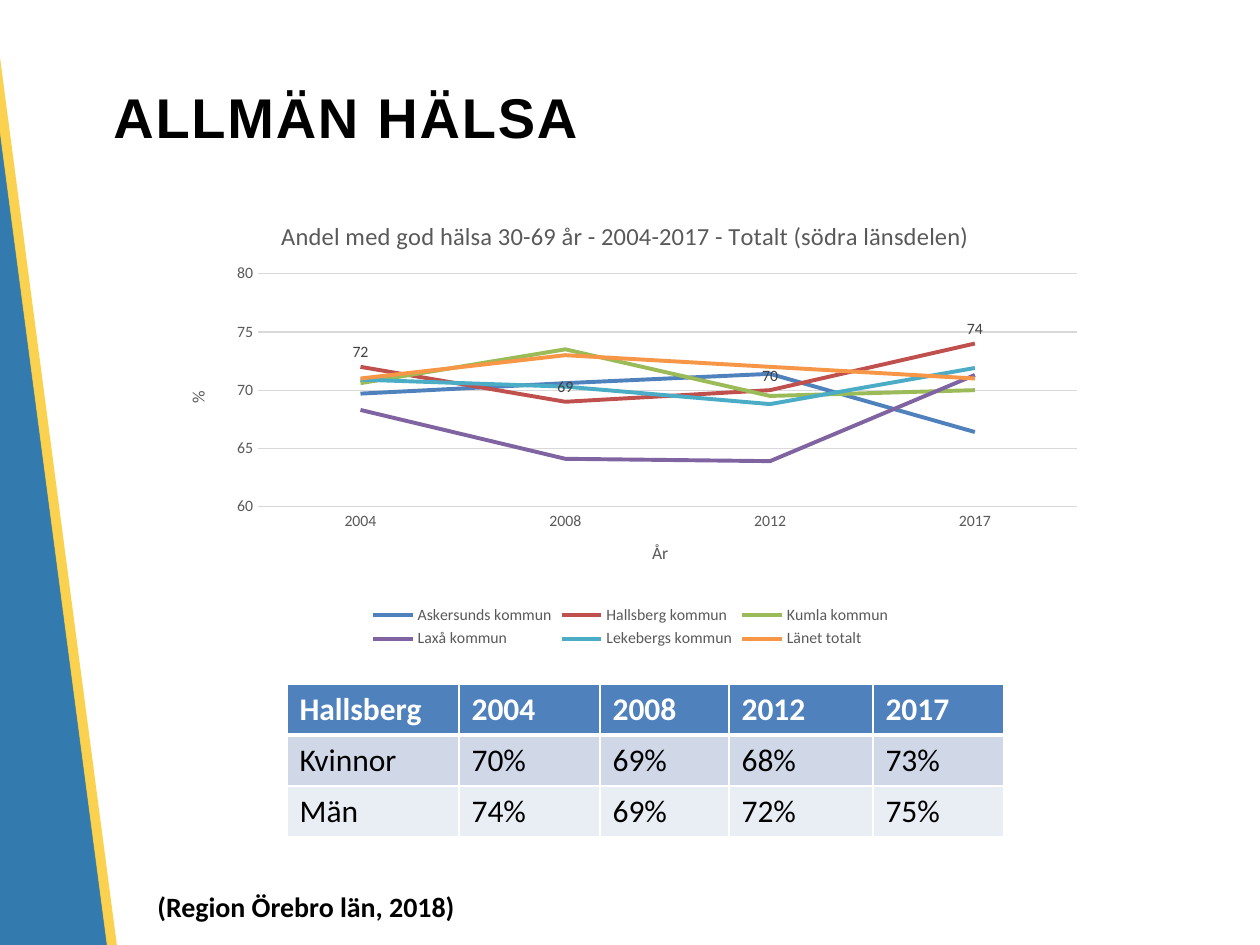
"""Build the "Allmän hälsa" slide: health trend chart and table for Hallsberg."""
from lxml import etree
from pptx import Presentation
from pptx.chart.data import CategoryChartData
from pptx.dml.color import RGBColor
from pptx.enum.chart import XL_CHART_TYPE, XL_LABEL_POSITION, XL_LEGEND_POSITION, XL_TICK_MARK
from pptx.enum.shapes import MSO_SHAPE
from pptx.enum.text import MSO_ANCHOR
from pptx.oxml import parse_xml
from pptx.oxml.ns import nsdecls, qn
from pptx.util import Emu, Pt

LINE_CHART = XL_CHART_TYPE.LINE
LABEL_ABOVE = XL_LABEL_POSITION.ABOVE
LEGEND_BOTTOM = XL_LEGEND_POSITION.BOTTOM
NO_TICK = XL_TICK_MARK.NONE
RECTANGLE = MSO_SHAPE.RECTANGLE
MIDDLE = MSO_ANCHOR.MIDDLE

PX = 914400 / 126
BLACK = RGBColor(0, 0, 0)
WHITE = RGBColor(255, 255, 255)
GRAY = RGBColor(0x59, 0x59, 0x59)
LABEL_GRAY = RGBColor(0x40, 0x40, 0x40)
GRID_GRAY = RGBColor(0xD9, 0xD9, 0xD9)
BAR_BLUE = RGBColor(0x00, 0x5B, 0x9C)
BAR_YELLOW = RGBColor(0xFA, 0xC8, 0x28)
BLUE = RGBColor(0x4F, 0x81, 0xBD)
RED = RGBColor(0xC0, 0x50, 0x4D)
GREEN = RGBColor(0x9B, 0xBB, 0x59)
PURPLE = RGBColor(0x80, 0x64, 0xA2)
TEAL = RGBColor(0x4B, 0xAC, 0xC6)
ORANGE = RGBColor(0xF7, 0x96, 0x46)
ROW_FILLS = [BLUE, RGBColor(0xD0, 0xD8, 0xE8), RGBColor(0xE9, 0xED, 0xF4)]

YEARS = ["2004", "2008", "2012", "2017"]
MUNICIPALITIES = [
    ("Askersunds kommun", BLUE, (69.7, 70.6, 71.4, 66.4)),
    ("Hallsberg kommun", RED, (72, 69, 70, 74)),
    ("Kumla kommun", GREEN, (70.6, 73.5, 69.5, 70)),
    ("Laxå kommun", PURPLE, (68.3, 64.1, 63.9, 71.3)),
    ("Lekebergs kommun", TEAL, (70.9, 70.3, 68.8, 71.9)),
    ("Länet totalt", ORANGE, (71, 73, 72, 71)),
]
TABLE_ROWS = [
    ["Hallsberg", *YEARS],
    ["Kvinnor", "70%", "69%", "68%", "73%"],
    ["Män", "74%", "69%", "72%", "75%"],
]
COLUMN_WIDTHS = [172, 141, 129, 144, 131]


def px(*lengths):
    return [Emu(round(length * PX)) for length in lengths]


def set_layout(parent, index, **fractions):
    for existing in parent.findall(qn("c:layout")):
        parent.remove(existing)
    layout = parse_xml(f"<c:layout {nsdecls('c')}><c:manualLayout/></c:layout>")
    modes = {"xMode": "edge", "yMode": "edge"}
    if "w" in fractions:
        modes = {"layoutTarget": "inner", **modes}
    for tag, value in {**modes, **fractions}.items():
        etree.SubElement(layout[0], qn(f"c:{tag}")).set("val", str(value))
    parent.insert(index, layout)


presentation = Presentation()
presentation.slide_width, presentation.slide_height = px(1260, 945)
slide = presentation.slides.add_slide(presentation.slide_layouts[6])

for box, color, opacity in [
    ((-66, -207, 115, 1427), BAR_BLUE, 80),
    ((47, -223, 10, 1426), BAR_YELLOW, 81),
]:
    bar = slide.shapes.add_shape(RECTANGLE, *px(*box))
    bar.rotation = 352.5
    bar.shadow.inherit = False
    bar.line.fill.background()
    bar.fill.solid()
    bar.fill.fore_color.rgb = color
    color_element = bar._element.spPr.find(".//" + qn("a:srgbClr"))
    etree.SubElement(color_element, qn("a:alpha")).set("val", str(opacity * 1000))

for text, box, font_name, size, spacing in [
    ("ALLMÄN HÄLSA", (101, 38, 1090, 157), "Arial", 32, 100),
    ("(Region Örebro län, 2018)", (145, 883, 343, 47), "Calibri", 16, 0),
]:
    text_box = slide.shapes.add_textbox(*px(*box))
    text_frame = text_box.text_frame
    text_frame.word_wrap = True
    text_frame.vertical_anchor = MIDDLE
    text_frame.text = text
    run = text_frame.paragraphs[0].runs[0]
    run.font.name = font_name
    run.font.size = Pt(size)
    run.font.bold = True
    run.font.color.rgb = BLACK
    run.font._element.set("spc", str(spacing))

table = slide.shapes.add_table(3, 5, *px(287, 684, 717, 153)).table
for column, width in zip(table.columns, COLUMN_WIDTHS):
    column.width = px(width)[0]
for row_index, (values, fill_color) in enumerate(zip(TABLE_ROWS, ROW_FILLS)):
    table.rows[row_index].height = px(51)[0]
    is_header = row_index == 0
    for column_index, value in enumerate(values):
        cell = table.cell(row_index, column_index)
        cell.text = value
        font = cell.text_frame.paragraphs[0].runs[0].font
        font.name = "Calibri"
        font.size = Pt(18)
        font.bold = is_header
        font.color.rgb = WHITE if is_header else BLACK
        properties = cell._tc.get_or_add_tcPr()
        for side in "LRTB":
            is_thick = (row_index, side) in [(0, "B"), (1, "T")]
            properties.append(parse_xml(
                f'<a:ln{side} {nsdecls("a")} w="{Pt(3 if is_thick else 1)}"><a:solidFill>'
                f'<a:srgbClr val="{WHITE}"/></a:solidFill></a:ln{side}>'))
        cell.fill.solid()
        cell.fill.fore_color.rgb = fill_color

chart_data = CategoryChartData(number_format="0.0")
chart_data.categories = YEARS
for name, _, values in MUNICIPALITIES:
    chart_data.add_series(name, values)
chart = slide.shapes.add_chart(LINE_CHART, *px(165, 196, 931, 457), chart_data).chart
chart.font.name = "Calibri"
chart.font.size = Pt(9)
chart.font.color.rgb = GRAY
chart.has_legend = True
chart.legend.position = LEGEND_BOTTOM
chart.legend.include_in_layout = False

plot = chart.plots[0]
plot.vary_by_categories = False
for series, (_, color, _) in zip(plot.series, MUNICIPALITIES):
    series.smooth = False
    series.format.line.color.rgb = color
    series.format.line.width = Pt(2.25)

labels = plot.series[1].data_labels
labels.show_value = True
labels.number_format = "0"
labels.number_format_is_linked = False
labels.position = LABEL_ABOVE
labels.font.name = "Calibri"
labels.font.size = Pt(9)
labels.font.color.rgb = LABEL_GRAY

category_axis, value_axis = chart.category_axis, chart.value_axis
for axis in (category_axis, value_axis):
    axis.major_tick_mark = NO_TICK
    axis.minor_tick_mark = NO_TICK
category_axis.format.line.color.rgb = GRID_GRAY
category_axis.format.line.width = Pt(0.75)
value_axis.format.line.fill.background()
value_axis.minimum_scale = 60
value_axis.maximum_scale = 80
value_axis.major_unit = 5
value_axis.tick_labels.number_format = "0"
value_axis.tick_labels.number_format_is_linked = False
value_axis.major_gridlines.format.line.color.rgb = GRID_GRAY
value_axis.major_gridlines.format.line.width = Pt(0.75)

chart_heading = "Andel med god hälsa 30-69 år - 2004-2017 - Totalt (södra länsdelen)"
for title, text, size, x, y in [
    (chart.chart_title, chart_heading, 14, 0.12, 0.04),
    (category_axis.axis_title, "År", 10, 0.52, 0.75),
    (value_axis.axis_title, "%", 10, 0.02, 0.42),
]:
    title.text_frame.text = text
    font = title.text_frame.paragraphs[0].runs[0].font
    font.name = "Calibri"
    font.size = Pt(size)
    font.bold = False
    font.color.rgb = GRAY
    set_layout(title._element, 1, x=x, y=y)
value_axis.axis_title.text_frame._txBody.bodyPr.set("rot", "-5400000")
set_layout(chart._chartSpace.chart.plotArea, 0, x=0.1, y=0.17, w=0.88, h=0.51)

presentation.save("out.pptx")
